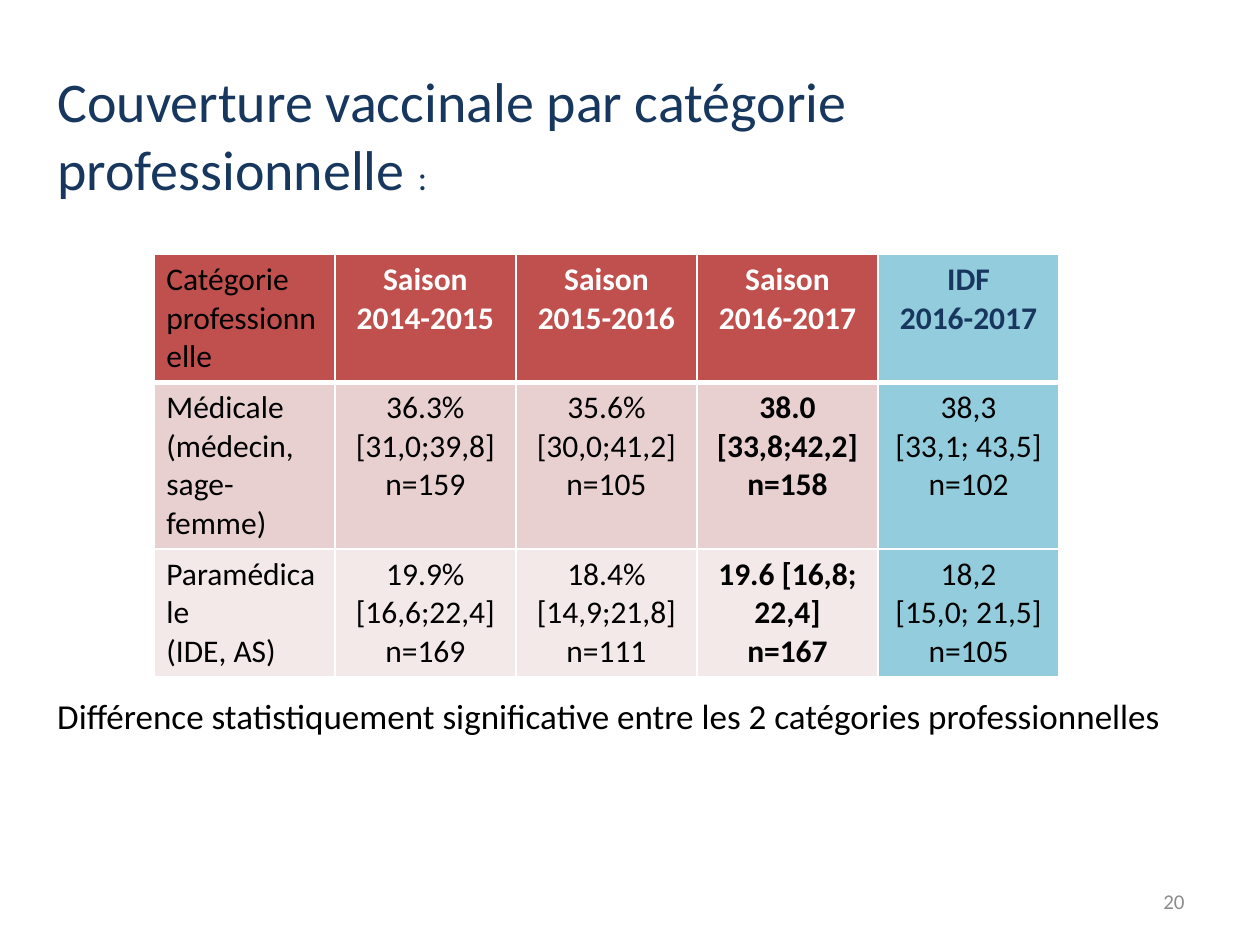
from dataclasses import dataclass

from lxml import etree
from pptx import Presentation
from pptx.dml.color import RGBColor
from pptx.enum.text import MSO_ANCHOR, MSO_AUTO_SIZE, PP_ALIGN
from pptx.oxml.ns import qn
from pptx.util import Cm, Pt

LEFT, CENTER, RIGHT = PP_ALIGN.LEFT, PP_ALIGN.CENTER, PP_ALIGN.RIGHT
TOP, MIDDLE = MSO_ANCHOR.TOP, MSO_ANCHOR.MIDDLE
NO_AUTOFIT = MSO_AUTO_SIZE.NONE


@dataclass(frozen=True)
class Theme:
    font: str = "Calibri"
    navy: str = "17375E"
    black: str = "000000"
    white: str = "FFFFFF"
    grey: str = "8C8C8C"
    red: str = "C0504D"
    blue: str = "93CDDD"
    bands: tuple = ("E8D0D0", "F4E9E9")
    title_size: int = 32
    note_size: int = 20
    table_size: int = 18
    number_size: int = 12


THEME = Theme()

TITLE = "Couverture vaccinale par catégorie professionnelle "
NOTE = "Différence statistiquement significative entre les 2 catégories professionnelles"
HEADER = [
    ["Catégorie professionnelle"],
    ["Saison 2014-2015"],
    ["Saison 2015-2016"],
    ["Saison 2016-2017"],
    ["IDF", "2016-2017"],
]
ROWS = [
    [
        ["Médicale", "(médecin, sage-femme)"],
        ["36.3% [31,0;39,8]", "n=159"],
        ["35.6% [30,0;41,2]", "n=105"],
        ["38.0 [33,8;42,2]", "n=158"],
        ["38,3", "[33,1; 43,5]", "n=102"],
    ],
    [
        ["Paramédicale", "(IDE, AS)"],
        ["19.9% [16,6;22,4]", "n=169"],
        ["18.4% [14,9;21,8]", "n=111"],
        ["19.6 [16,8; 22,4]", "n=167"],
        ["18,2", "[15,0; 21,5]", "n=105"],
    ],
]
ROW_HEIGHTS = [Cm(2.57), Cm(3.35), Cm(2.58)]
COLUMN_WIDTH = Cm(3.65)
CURRENT_SEASON, REGION = 3, 4


def set_attributes(target, values):
    for name, value in values.items():
        setattr(target, name, value)


def add_span(para, text, size, color, bold=False):
    span = para.add_run()
    span.text = text
    set_attributes(span.font, {"name": THEME.font, "size": Pt(size), "bold": bold})
    span.font.color.rgb = RGBColor.from_string(color)


def format_box(box, left, top, width, height, align, anchor=TOP):
    set_attributes(box, {"left": left, "top": top, "width": width, "height": height})
    set_attributes(box.text_frame, {
        "word_wrap": True, "auto_size": NO_AUTOFIT, "vertical_anchor": anchor,
    })
    para = box.text_frame.paragraphs[0]
    set_attributes(para, {"alignment": align, "space_before": Pt(0)})
    return para


def remove_bullet(para):
    properties = para._p.get_or_add_pPr()
    properties.set("marL", "0")
    properties.set("indent", "0")
    etree.SubElement(properties, qn("a:buNone"))


def add_border(cell, side, width):
    properties = cell._tc.get_or_add_tcPr()
    line = etree.SubElement(properties, qn(f"a:ln{side}"), w=str(Pt(width)))
    fill = etree.SubElement(line, qn("a:solidFill"))
    etree.SubElement(fill, qn("a:srgbClr"), val=THEME.white)


def cell_style(row, column):
    header = row == 0
    if column == REGION:
        return THEME.blue, THEME.navy if header else THEME.black, header
    fill = THEME.red if header else THEME.bands[row - 1]
    color = THEME.white if header and column else THEME.black
    bold = column > 0 if header else column == CURRENT_SEASON
    return fill, color, bold


def fill_cell(cell, lines, row, column):
    widths = {"L": 1, "R": 1, "T": 3 if row == 1 else 1, "B": 3 if row == 0 else 1}
    for side, width in widths.items():
        add_border(cell, side, width)
    fill, color, bold = cell_style(row, column)
    cell.fill.solid()
    cell.fill.fore_color.rgb = RGBColor.from_string(fill)
    frame = cell.text_frame
    for index, text in enumerate(lines):
        para = frame.add_paragraph() if index else frame.paragraphs[0]
        para.alignment = CENTER if column else LEFT
        add_span(para, text, THEME.table_size, color, bold)


def add_coverage_table(page):
    content = [HEADER, *ROWS]
    frame = page.shapes.add_table(
        len(content), len(HEADER), Cm(3.1), Cm(5.13),
        COLUMN_WIDTH * len(HEADER), sum(ROW_HEIGHTS),
    )
    table = frame.table
    set_attributes(table, {"first_row": False, "horz_banding": False})
    for column in table.columns:
        column.width = COLUMN_WIDTH
    for row, cells in enumerate(content):
        table.rows[row].height = ROW_HEIGHTS[row]
        for column, lines in enumerate(cells):
            fill_cell(table.cell(row, column), lines, row, column)


def add_title(page):
    para = format_box(page.shapes.title, Cm(0.9), Cm(1.22), Cm(23.47), Cm(3.2), LEFT)
    add_span(para, TITLE, THEME.title_size, THEME.navy)
    add_span(para, ":", THEME.note_size, THEME.navy)


def add_note(page):
    para = format_box(page.placeholders[1], Cm(0.9), Cm(13.87), Cm(23.47), Cm(1.2), LEFT)
    remove_bullet(para)
    add_span(para, NOTE, THEME.note_size, THEME.black)


def add_page_number(page):
    area = Cm(18.2), Cm(17.65), Cm(5.93), Cm(1.02)
    box = page.shapes.add_textbox(*area)
    para = format_box(box, *area, RIGHT, MIDDLE)
    add_span(para, "20", THEME.number_size, THEME.grey)


def main():
    deck = Presentation()
    set_attributes(deck, {"slide_width": Cm(25.4), "slide_height": Cm(19.05)})
    page = deck.slides.add_slide(deck.slide_layouts[1])
    add_title(page)
    add_note(page)
    add_coverage_table(page)
    add_page_number(page)
    deck.save("out.pptx")


if __name__ == "__main__":
    main()
